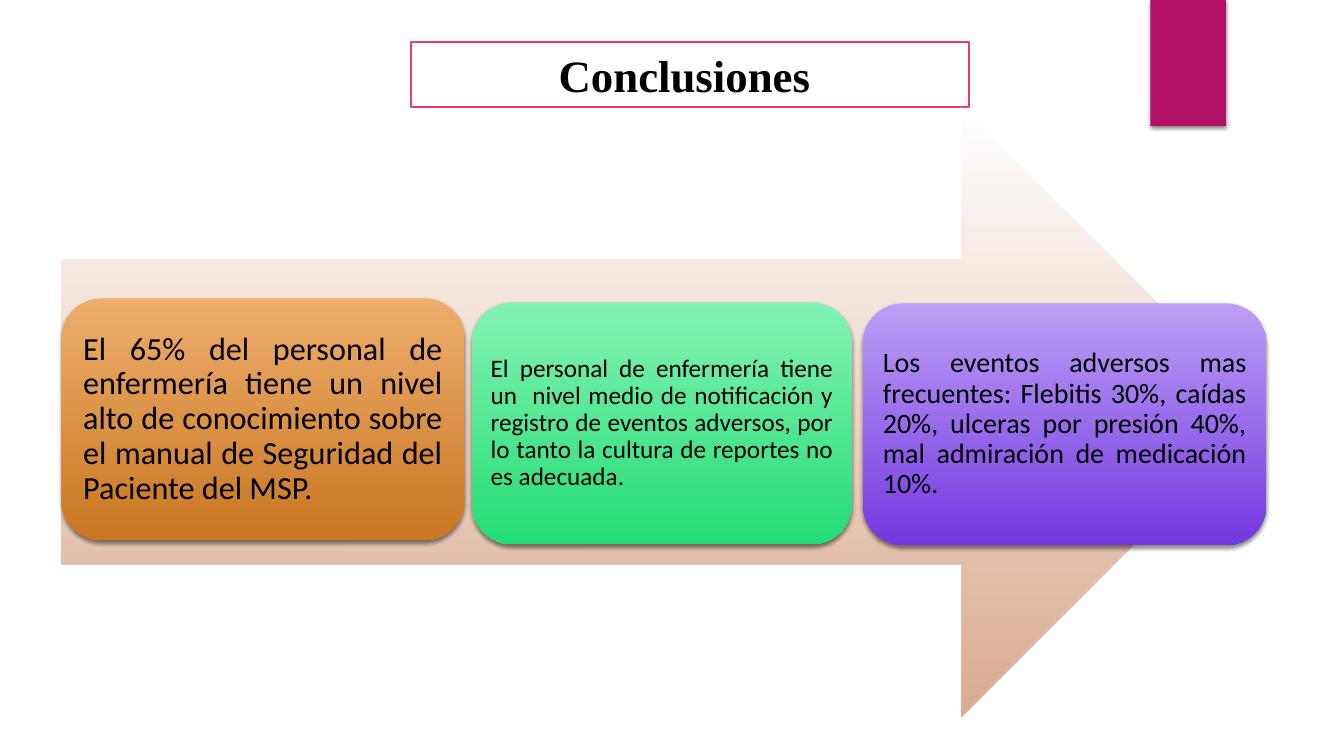
from lxml.etree import SubElement
from pptx import Presentation
from pptx.dml.color import RGBColor
from pptx.enum.shapes import MSO_SHAPE
from pptx.enum.text import MSO_ANCHOR, MSO_AUTO_SIZE, PP_ALIGN
from pptx.oxml.ns import qn
from pptx.util import Inches, Pt

BLACK = RGBColor(0x00, 0x00, 0x00)
WHITE = RGBColor(0xFF, 0xFF, 0xFF)
MAGENTA = RGBColor(0xB3, 0x11, 0x66)
PINK = RGBColor(0xE3, 0x3D, 0x6F)
TAN = RGBColor(0xDA, 0xAB, 0x91)
ORANGE = RGBColor(0xEE, 0xAD, 0x6D), RGBColor(0xC9, 0x77, 0x21)
GREEN = RGBColor(0x84, 0xF2, 0xB3), RGBColor(0x24, 0xDC, 0x74)
PURPLE = RGBColor(0xBD, 0x9E, 0xF6), RGBColor(0x74, 0x38, 0xE0)

CARD_HEIGHT = 2.4
# left, top, width, inset, font size, gradient, text
CARDS = [
    (0.61, 2.96, 4, 0.1, 23, ORANGE,
     "El 65% del personal de enfermería tiene un nivel alto de conocimiento "
     "sobre el manual de Seguridad del Paciente del MSP."),
    (4.68, 3, 3.77, 0.07, 18, GREEN,
     "El personal de enfermería tiene un  nivel medio de notificación y "
     "registro de eventos adversos, por lo tanto la cultura de reportes no "
     "es adecuada."),
    (8.56, 3.01, 4, 0.08, 20, PURPLE,
     "Los eventos adversos mas frecuentes: Flebitis 30%, caídas 20%, ulceras "
     "por presión 40%, mal admiración de medicación 10%."),
]


def add_plain_shape(slide, kind, box):
    """Add a shape without outline or shadow; box is left, top, width, height in inches."""
    shape = slide.shapes.add_shape(kind, *map(Inches, box))
    shape.shadow.inherit = False
    shape.line.fill.background()
    return shape


def fill_downwards(shape, top_color, bottom_color):
    shape.fill.gradient()
    shape.fill.gradient_angle = 270
    for stop, color in zip(shape.fill.gradient_stops, (top_color, bottom_color)):
        stop.color.rgb = color


def add_drop_shadow(shape):
    effects = shape.element.spPr.find(qn("a:effectLst"))
    shadow = SubElement(effects, qn("a:outerShdw"), blurRad=str(Pt(3)),
                        dist=str(Pt(2)), dir="5400000", rotWithShape="0")
    color = SubElement(shadow, qn("a:srgbClr"), val=str(BLACK))
    SubElement(color, qn("a:alpha"), val="45000")


def add_corner_tab(slide, box):
    tab = add_plain_shape(slide, MSO_SHAPE.RECTANGLE, box)
    tab.fill.solid()
    tab.fill.fore_color.rgb = MAGENTA
    add_drop_shadow(tab)


def format_title(slide, box):
    title = slide.shapes.title
    title.left, title.top, title.width, title.height = map(Inches, box)
    title.fill.solid()
    title.fill.fore_color.rgb = WHITE
    title.line.color.rgb = PINK
    title.line.width = Pt(1.5)
    frame = title.text_frame
    frame.text = "Conclusiones "
    frame.word_wrap = True
    frame.auto_size = MSO_AUTO_SIZE.NONE
    frame.vertical_anchor = MSO_ANCHOR.MIDDLE
    paragraph = frame.paragraphs[0]
    paragraph.alignment = PP_ALIGN.CENTER
    set_font(paragraph, "Times New Roman", 32, bold=True)


def set_font(paragraph, name, size, bold=False):
    font = paragraph.font
    font.name, font.size, font.bold = name, Pt(size), bold
    font.color.rgb = BLACK


def add_arrow(slide, box):
    arrow = add_plain_shape(slide, MSO_SHAPE.RIGHT_ARROW, box)
    fill_downwards(arrow, WHITE, TAN)


def add_card(slide, box, inset, size, gradient, text):
    card = add_plain_shape(slide, MSO_SHAPE.ROUNDED_RECTANGLE, box)
    fill_downwards(card, *gradient)
    add_drop_shadow(card)
    frame = card.text_frame
    frame.text = text
    frame.word_wrap = True
    frame.vertical_anchor = MSO_ANCHOR.MIDDLE
    frame.margin_left = frame.margin_right = Inches(inset)
    frame.margin_top = frame.margin_bottom = Inches(inset)
    paragraph = frame.paragraphs[0]
    paragraph.alignment = PP_ALIGN.JUSTIFY
    paragraph.line_spacing = 0.9
    set_font(paragraph, "Calibri", size)


def main():
    presentation = Presentation()
    presentation.slide_width = Inches(13.33)
    presentation.slide_height = Inches(7.5)
    slide = presentation.slides.add_slide(presentation.slide_layouts[5])
    add_corner_tab(slide, (11.41, 0, 0.75, 1.25))
    format_title(slide, (4.08, 0.42, 5.53, 0.64))
    add_arrow(slide, (0.61, 1.06, 11.95, 6.05))
    for left, top, width, *content in CARDS:
        add_card(slide, (left, top, width, CARD_HEIGHT), *content)
    presentation.save("out.pptx")


if __name__ == "__main__":
    main()
